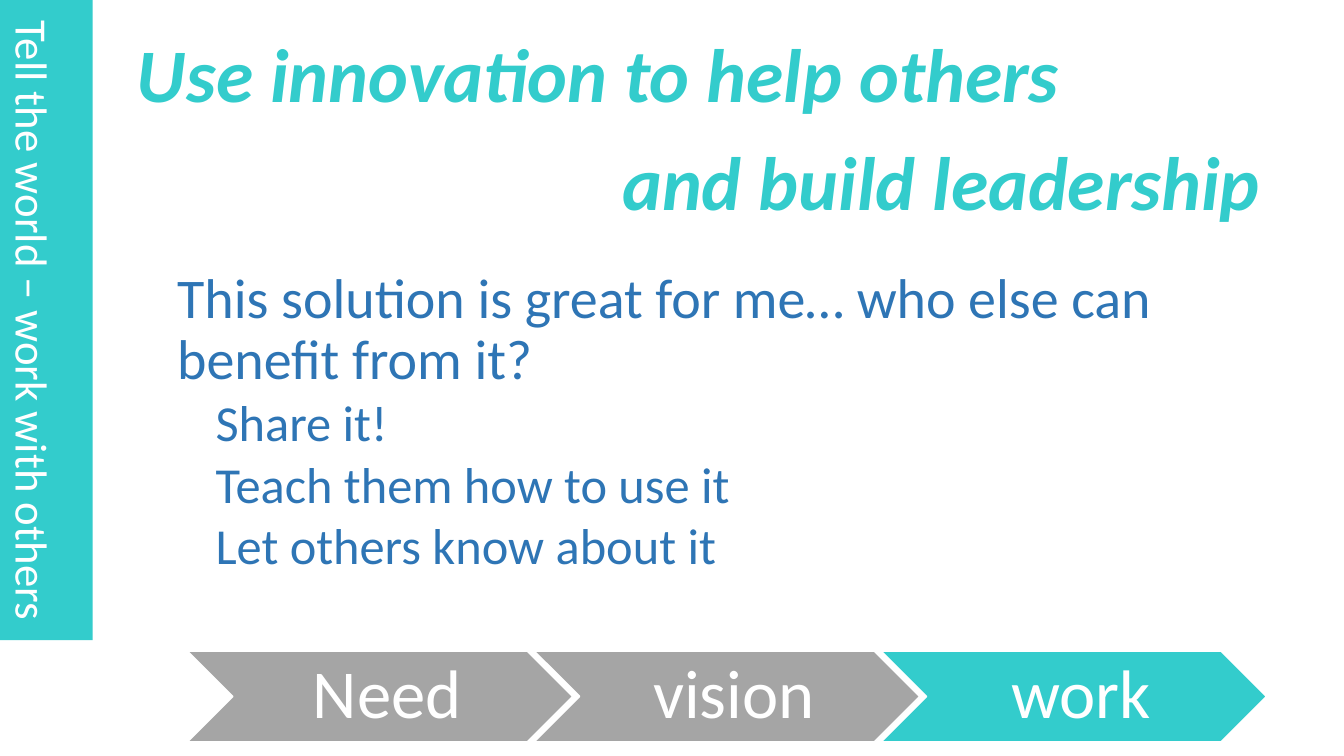
from pptx import Presentation
from pptx.dml.color import RGBColor
from pptx.enum.shapes import MSO_SHAPE
from pptx.enum.text import MSO_ANCHOR, PP_ALIGN
from pptx.util import Inches, Pt

TEAL = RGBColor(0x33, 0xCC, 0xCC)
GRAY = RGBColor(0xA5, 0xA5, 0xA5)
BLUE = RGBColor(0x2E, 0x75, 0xB5)
WHITE = RGBColor(0xFF, 0xFF, 0xFF)


def set_insets(tf, left, top, right, bottom):
    tf.margin_left, tf.margin_top = Inches(left), Inches(top)
    tf.margin_right, tf.margin_bottom = Inches(right), Inches(bottom)


def style(p, size, color, align=PP_ALIGN.LEFT, spacing=None, before=0):
    p.alignment = align
    if spacing:
        p.line_spacing = spacing
    if before:
        p.space_before = Pt(before)
    for r in p.runs:
        r.font.name = "Calibri"
        r.font.size = Pt(size)
        r.font.color.rgb = color


def add_filled(s, kind, x, y, w, h, fill):
    sp = s.shapes.add_shape(kind, Inches(x), Inches(y), Inches(w), Inches(h))
    sp.shadow.inherit = False
    sp.fill.solid()
    sp.fill.fore_color.rgb = fill
    return sp


def add_textbox(s, x, y, w, h):
    tf = s.shapes.add_textbox(Inches(x), Inches(y), Inches(w), Inches(h)).text_frame
    tf.word_wrap = True
    return tf


def add_sidebar(s, x, y, w, h):
    sp = add_filled(s, MSO_SHAPE.RECTANGLE, x, y, w, h, TEAL)
    sp.line.fill.background()
    tf = sp.text_frame
    tf.text = "Tell the world – work with others"
    # Text runs downwards
    body = tf._txBody.bodyPr
    body.set("vert", "vert")
    tf.vertical_anchor = MSO_ANCHOR.BOTTOM
    set_insets(tf, 0.06, 0.05, 0.1, 0.2)
    style(tf.paragraphs[0], 32, WHITE, PP_ALIGN.RIGHT, 0.9)


def add_heading(s, x, y, w, h):
    tf = add_textbox(s, x, y, w, h)
    tf.text = "Use innovation to help others\nand build leadership"
    first, second = tf.paragraphs
    style(first, 54, TEAL)
    style(second, 54, TEAL, PP_ALIGN.RIGHT, before=12)
    for p in tf.paragraphs:
        p.runs[0].font.bold = True
        p.runs[0].font.italic = True


def add_body(s, x, y, w, h):
    tf = add_textbox(s, x, y, w, h)
    tf.vertical_anchor = MSO_ANCHOR.MIDDLE
    tf.text = "\n".join([
        "This solution is great for me… who else can benefit from it?",
        "Share it!",
        "Teach them how to use it",
        "Let others know about it",
    ])
    question, *actions = tf.paragraphs
    style(question, 40, BLUE, spacing=0.9)
    for p in actions:
        p.level = 1
        pPr = p._p.get_or_add_pPr()
        pPr.set("marL", str(Inches(0.38)))
        pPr.set("indent", "0")
        style(p, 36, BLUE, spacing=0.9, before=5)


def add_steps(s, x, y, w, h):
    steps = [("Need", GRAY), ("vision", GRAY), ("work", TEAL)]
    step_w = 3.82
    pitch = (w - step_w) / (len(steps) - 1)
    for i, (label, fill) in enumerate(steps):
        sp = add_filled(s, MSO_SHAPE.CHEVRON, x + i * pitch, y, step_w, h, fill)
        sp.line.color.rgb = WHITE
        sp.line.width = Pt(1)
        tf = sp.text_frame
        tf.text = label
        tf.vertical_anchor = MSO_ANCHOR.MIDDLE
        set_insets(tf, 0.21, 0.07, 0.07, 0.07)
        style(tf.paragraphs[0], 49, WHITE, PP_ALIGN.CENTER, 0.9)


def main():
    prs = Presentation()
    prs.slide_width, prs.slide_height = Inches(13.33), Inches(7.5)
    s = prs.slides.add_slide(prs.slide_layouts[6])
    add_sidebar(s, 0, 0, 0.92, 6.35)
    add_body(s, 1.66, 2.31, 10.76, 3.77)
    add_heading(s, 1.26, 0.22, 11.34, 2.09)
    add_steps(s, 1.86, 6.46, 10.7, 0.9)
    prs.save("out.pptx")


if __name__ == "__main__":
    main()
